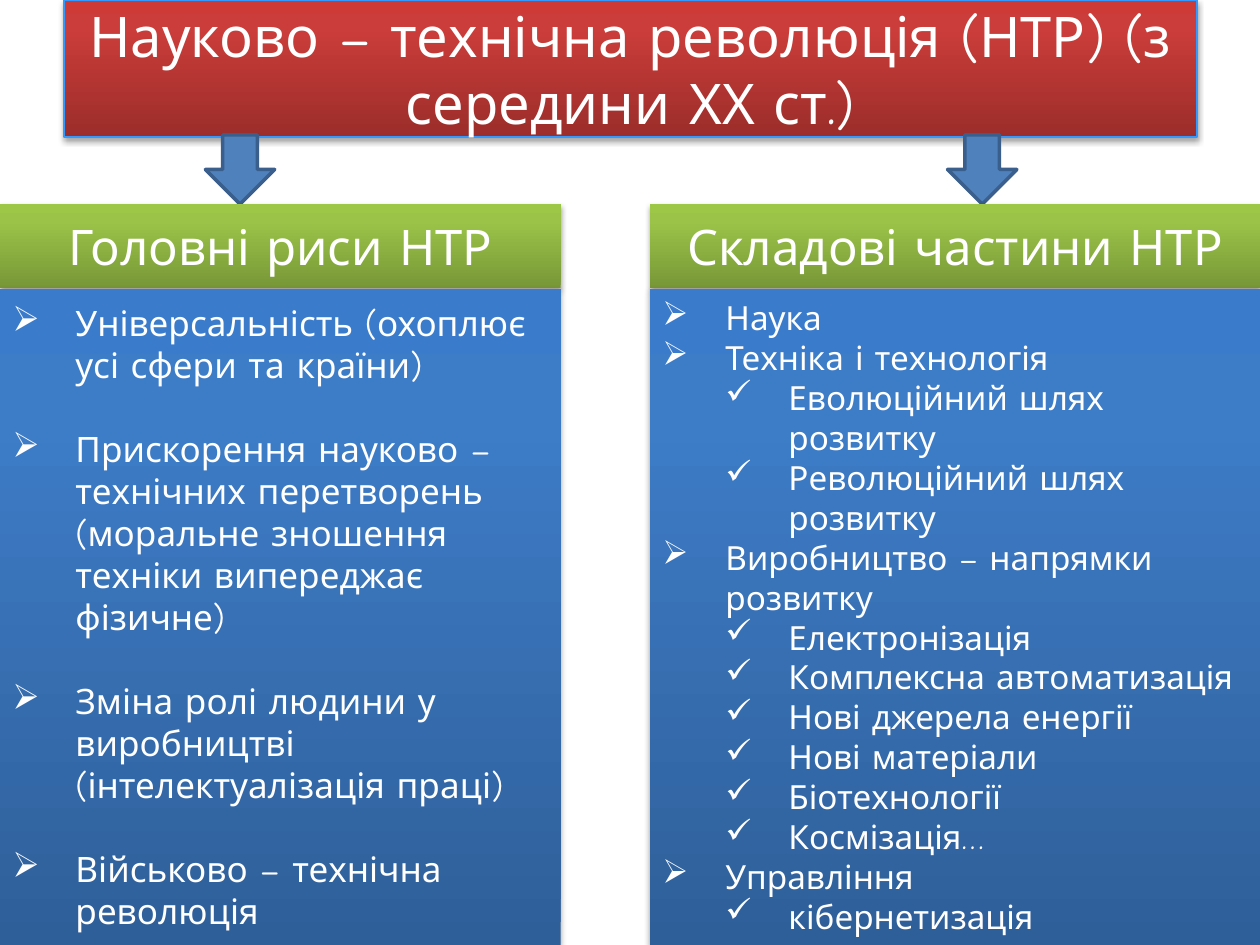
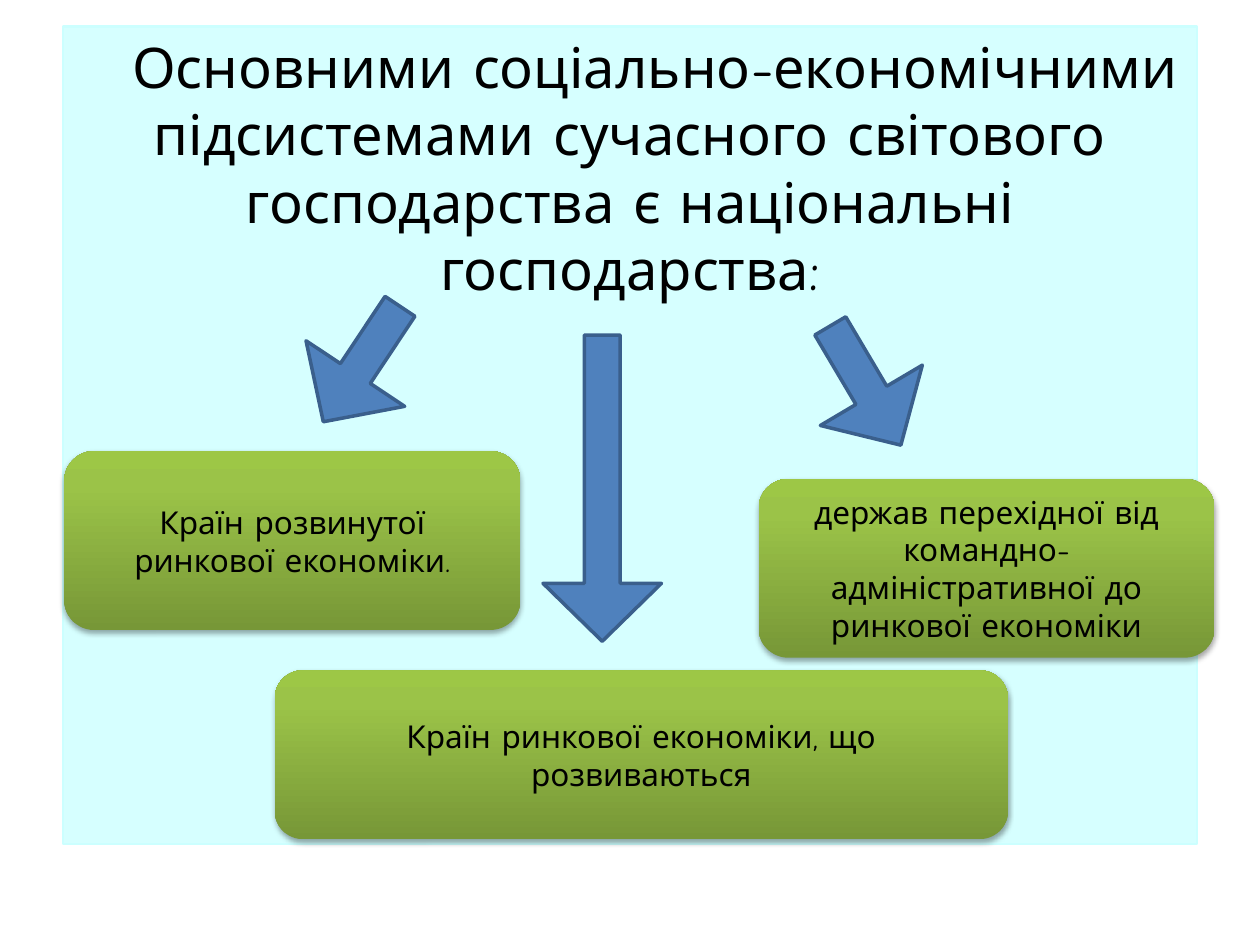
"""Build two slides on the scientific and technical revolution."""
from dataclasses import dataclass

import lxml.etree
import pptx
import pptx.dml.color
import pptx.enum.shapes
import pptx.enum.text
import pptx.oxml.ns
import pptx.util

Inches = pptx.util.Inches
Pt = pptx.util.Pt
Shape = pptx.enum.shapes.MSO_SHAPE
Align = pptx.enum.text.PP_ALIGN
Anchor = pptx.enum.text.MSO_ANCHOR
qn = pptx.oxml.ns.qn


@dataclass(frozen=True)
class Theme:
    """Colours, type sizes and gradients shared by the slides."""

    font: str = "Comic Neue"
    light: str = "FFFFFF"
    dark: str = "000000"
    edge: str = "3399FF"
    panel: str = "CCFFFF"
    arrow: str = "4F81BD"
    arrow_edge: str = "3A5F8C"
    red: tuple = ("9B2D2A", "CB3D3A", "CE3B37")
    green: tuple = ("779737", "9BC348", "9DC746")
    blue: tuple = ("2F5F99", "3D7CC7", "3A7CCB")
    title_size: int = 32
    header_size: int = 28
    features_size: int = 20
    parts_size: int = 19
    card_size: int = 18


THEME = Theme()
ARROW_MARK = "➢"
CHECK_MARK = "✓"

FEATURES = [
    (0, "Універсальність (охоплює усі сфери та країни)"),
    (0, "Прискорення науково – технічних перетворень "
        "(моральне зношення техніки випереджає фізичне)"),
    (0, "Зміна ролі людини у виробництві (інтелектуалізація праці)"),
    (0, "Військово – технічна революція"),
]
PARTS = [
    (0, "Наука"),
    (0, "Техніка і технологія"),
    (1, "Еволюційний шлях розвитку"),
    (1, "Революційний шлях розвитку"),
    (0, "Виробництво – напрямки розвитку"),
    (1, "Електронізація"),
    (1, "Комплексна автоматизація"),
    (1, "Нові джерела енергії"),
    (1, "Нові матеріали"),
    (1, "Біотехнології"),
    (1, "Космізація…"),
    (0, "Управління"),
    (1, "кібернетизація"),
]


def rgb(value):
    """Return a colour object for a hex value."""
    return pptx.dml.color.RGBColor.from_string(value)


def apply_format(target, values):
    """Set each attribute named in values on target."""
    for name, value in values.items():
        setattr(target, name, value)


def add_child(parent, tag, **attributes):
    """Append a drawing element with the given attributes."""
    texts = {name: str(value) for name, value in attributes.items()}
    return lxml.etree.SubElement(parent, qn(tag), texts)


def add_box(slide, kind, box, fill, line=None, line_width=1):
    """Add a preset shape with a solid or gradient fill and an optional line."""
    shape = slide.shapes.add_shape(kind, *(Inches(length) for length in box))
    shape.shadow.inherit = False
    if isinstance(fill, tuple):
        fill_gradient(shape, fill)
        add_shadow(shape)
    else:
        shape.fill.solid()
        shape.fill.fore_color.rgb = rgb(fill)
    if line:
        shape.line.color.rgb = rgb(line)
        shape.line.width = Pt(line_width)
    else:
        shape.line.fill.background()
    return shape


def fill_gradient(shape, colors):
    """Fill a shape from bottom to top with three colours."""
    shape.fill.gradient()
    gradient = shape.element.spPr.find(qn("a:gradFill"))
    for child in list(gradient):
        gradient.remove(child)
    stops = add_child(gradient, "a:gsLst")
    for position, color in zip((0, 80000, 100000), colors):
        stop = add_child(stops, "a:gs", pos=position)
        add_child(stop, "a:srgbClr", val=color)
    add_child(gradient, "a:lin", ang=16200000, scaled=0)


def add_shadow(shape):
    """Give a shape a soft shadow below it."""
    effects = shape.element.spPr.find(qn("a:effectLst"))
    shadow = add_child(effects, "a:outerShdw", blurRad=Pt(3.1), dist=Pt(1.8),
                       dir=5400000, rotWithShape=0)
    color = add_child(shadow, "a:srgbClr", val=THEME.dark)
    add_child(color, "a:alpha", val=35000)


def write_paragraph(paragraph, text, size, color, **layout):
    """Write one paragraph in the shared typeface."""
    apply_format(paragraph, layout)
    run = paragraph.add_run()
    run.text = text
    apply_format(run.font, {"name": THEME.font, "size": Pt(size)})
    run.font.color.rgb = rgb(color)


def write_label(shape, text, size, color, anchor=Anchor.MIDDLE):
    """Write centred text in a shape."""
    apply_format(shape.text_frame, {"word_wrap": True, "vertical_anchor": anchor})
    paragraph = shape.text_frame.paragraphs[0]
    write_paragraph(paragraph, text, size, color, alignment=Align.CENTER)
    return paragraph


def write_list(shape, items, size, gap):
    """Write a two-level bulleted list with a gap between items."""
    frame = shape.text_frame
    apply_format(frame, {"word_wrap": True, "vertical_anchor": Anchor.MIDDLE})
    for index, (level, text) in enumerate(items):
        paragraph = frame.add_paragraph() if index else frame.paragraphs[0]
        properties = paragraph._p.get_or_add_pPr()
        properties.set("marL", str(Inches(0.5 * (level + 1))))
        properties.set("indent", str(Inches(-0.5)))
        add_child(properties, "a:buChar", char=CHECK_MARK if level else ARROW_MARK)
        layout = {"alignment": Align.LEFT, "level": level}
        if index and gap:
            layout["space_before"] = Pt(gap)
        write_paragraph(paragraph, text, size, THEME.light, **layout)


def add_arrow(slide, box, rotation=0, adjustments=()):
    """Add a block arrow that points down before rotation."""
    arrow = add_box(slide, Shape.DOWN_ARROW, box, THEME.arrow, THEME.arrow_edge, 2)
    arrow.rotation = rotation
    for index, value in enumerate(adjustments):
        arrow.adjustments[index] = value


def add_title(slide, box, text):
    """Add the red title band."""
    band = add_box(slide, Shape.RECTANGLE, box, THEME.red, THEME.edge)
    write_label(band, text, THEME.title_size, THEME.light)


def add_column(slide, box, header, items, size, gap=0):
    """Add a green header with a blue list below it."""
    left, top, width, height = box
    header_height = 0.67
    band = add_box(slide, Shape.RECTANGLE, (left, top, width, header_height), THEME.green)
    write_label(band, header, THEME.header_size, THEME.light)
    body_box = (left, top + header_height, width, height - header_height)
    body = add_box(slide, Shape.RECTANGLE, body_box, THEME.blue)
    write_list(body, items, size, gap)


def add_panel(slide, box, text):
    """Add the pale panel with its heading at the top."""
    panel = add_box(slide, Shape.RECTANGLE, box, THEME.panel, THEME.panel, 1.5)
    color = panel.element.spPr.find(qn("a:solidFill"))[0]
    add_child(color, "a:alpha", val=80000)
    paragraph = write_label(panel, text, THEME.title_size, THEME.dark, Anchor.TOP)
    paragraph._p.get_or_add_pPr().set("indent", str(Inches(0.4)))


def add_economies(slide, box):
    """Add the three kinds of economy and the arrows leading to them."""
    left, top = box[:2]
    cards = [
        (0.01, 3.37, 3.62, 1.42, "Країн розвинутої ринкової економіки."),
        (1.68, 5.11, 5.82, 1.34, "Країн ринкової економіки, що розвиваються"),
        (5.52, 3.59, 3.62, 1.42,
         "держав перехідної від командно-адміністративної до ринкової економіки"),
    ]
    for x, y, width, height, text in cards:
        card = add_box(slide, Shape.FLOWCHART_ALTERNATE_PROCESS,
                       (left + x, top + y, width, height), THEME.green)
        write_label(card, text, THEME.card_size, THEME.dark)
    arrows = [(1.9, 2.13, 1.1, 33.6), (3.81, 2.45, 2.43, 0), (5.9, 2.3, 1.1, 329.4)]
    for x, y, height, rotation in arrows:
        add_arrow(slide, (left + x, top + y, 0.94, height), rotation, (0.303, 0.489))


def build_revolution(slide, box):
    """Lay out the title, its arrows and the two columns."""
    left, top, width, height = box
    add_title(slide, (left + 0.51, top, 8.99, 1.09),
              "Науково – технічна революція (НТР) (з середини ХХ ст.)")
    for x in (1.63, 7.52):
        add_arrow(slide, (left + x, top + 1.07, 0.55, 0.55))
    column_top = 1.62
    column_height = height - column_top
    add_column(slide, (left, top + column_top, 4.45, column_height),
               "Головні риси НТР", FEATURES, THEME.features_size, gap=24)
    add_column(slide, (left + width - 4.84, top + column_top, 4.84, column_height),
               "Складові частини НТР", PARTS, THEME.parts_size)


def build_subsystems(slide, box):
    """Lay out the panel and the economies inside it."""
    left, top = box[:2]
    panel_box = (left + 0.5, top + 0.21, 9, 6.49)
    add_panel(slide, panel_box,
              "Основними соціально-економічними підсистемами сучасного "
              "світового господарства є національні господарства:")
    add_economies(slide, panel_box)


def main():
    """Build and save the presentation."""
    presentation = pptx.Presentation()
    page = (0, 0, 10, 7.5)
    apply_format(presentation, {"slide_width": Inches(page[2]),
                                "slide_height": Inches(page[3])})
    for build in (build_revolution, build_subsystems):
        build(presentation.slides.add_slide(presentation.slide_layouts[6]), page)
    presentation.save("out.pptx")


if __name__ == "__main__":
    main()
